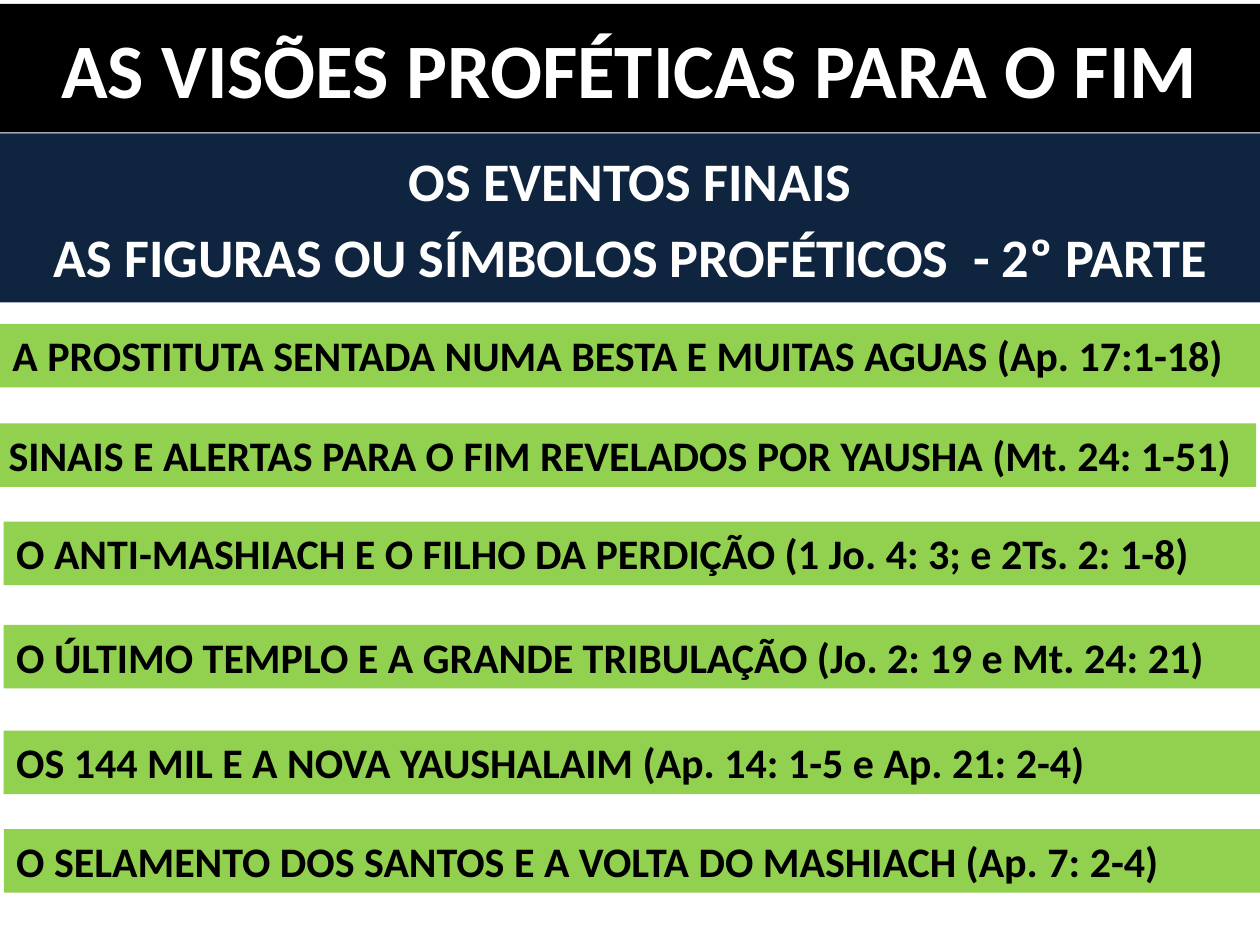
from dataclasses import dataclass

from pptx import Presentation
from pptx.dml.color import RGBColor
from pptx.enum.text import MSO_ANCHOR, MSO_AUTO_SIZE, PP_ALIGN
from pptx.util import Inches, Pt


@dataclass(frozen=True)
class Theme:
    font: str = "Calibri"
    title_size: float = 44
    subtitle_size: float = 31
    topic_size: float = 24
    light: str = "FFFFFF"
    dark: str = "000000"
    navy: str = "0F243E"
    green: str = "92D050"


@dataclass(frozen=True)
class Box:
    """A rectangle in shares of the slide's width and height."""
    left: float
    top: float
    width: float
    height: float


@dataclass(frozen=True)
class Topic:
    text: str
    top: float
    left: float = 0.003
    width: float = 1
    align: PP_ALIGN = PP_ALIGN.JUSTIFY


THEME = Theme()
SLIDE_W, SLIDE_H = Inches(10), Inches(7.5)
TOPIC_HEIGHT = 0.0673

TITLE = "AS VISÕES PROFÉTICAS PARA O FIM"
SUBTITLE = ["OS EVENTOS FINAIS", "AS FIGURAS OU SÍMBOLOS PROFÉTICOS  - 2º PARTE"]
TOPICS = [
    Topic("A PROSTITUTA SENTADA NUMA BESTA E MUITAS AGUAS (Ap. 17:1-18)",
          0.3427, left=0),
    Topic("SINAIS E ALERTAS PARA O FIM REVELADOS POR YAUSHA (Mt. 24: 1-51)",
          0.448, left=-0.003, align=PP_ALIGN.LEFT),
    Topic("O ANTI-MASHIACH E O FILHO DA PERDIÇÃO (1 Jo. 4: 3; e 2Ts. 2: 1-8)", 0.552),
    Topic("O ÚLTIMO TEMPLO E A GRANDE TRIBULAÇÃO (Jo. 2: 19 e Mt. 24: 21)", 0.6613),
    Topic("OS 144 MIL E A NOVA YAUSHALAIM (Ap. 14: 1-5 e Ap. 21: 2-4)",
          0.7733, width=1.006),
    Topic("O SELAMENTO DOS SANTOS E A VOLTA DO MASHIACH (Ap. 7: 2-4)",
          0.8773, width=1.001),
]


def place(sp, box: Box, fill: str) -> None:
    sp.left, sp.width = (round(SLIDE_W * v) for v in (box.left, box.width))
    sp.top, sp.height = (round(SLIDE_H * v) for v in (box.top, box.height))
    sp.fill.solid()
    sp.fill.fore_color.rgb = RGBColor.from_string(fill)


def write(sp, lines: list[str], *, size: float, color: str,
          align: PP_ALIGN = PP_ALIGN.CENTER,
          anchor: MSO_ANCHOR = MSO_ANCHOR.MIDDLE,
          auto_size: MSO_AUTO_SIZE = MSO_AUTO_SIZE.NONE,
          before: float = 0) -> None:
    tf = sp.text_frame
    tf.word_wrap = True
    tf.auto_size = auto_size
    tf.vertical_anchor = anchor
    for i, line in enumerate(lines):
        p = tf.add_paragraph() if i else tf.paragraphs[0]
        p.alignment = align
        p.space_before = Pt(before)
        r = p.add_run()
        r.text = line
        r.font.name = THEME.font
        r.font.size = Pt(size)
        r.font.bold = True
        r.font.color.rgb = RGBColor.from_string(color)


def add_band(s, box: Box, fill: str):
    sp = s.shapes.add_textbox(0, 0, 0, 0)
    place(sp, box, fill)
    return sp


def add_topic(s, topic: Topic) -> None:
    box = Box(topic.left, topic.top, topic.width, TOPIC_HEIGHT)
    write(add_band(s, box, THEME.green), [topic.text],
          size=THEME.topic_size, color=THEME.dark, align=topic.align,
          anchor=MSO_ANCHOR.TOP, auto_size=MSO_AUTO_SIZE.SHAPE_TO_FIT_TEXT)


def main() -> None:
    prs = Presentation()
    prs.slide_width, prs.slide_height = SLIDE_W, SLIDE_H
    s = prs.slides.add_slide(prs.slide_layouts[5])

    place(s.shapes.title, Box(0, 0.004, 1, 0.136), THEME.dark)
    write(s.shapes.title, [TITLE], size=THEME.title_size, color=THEME.light)

    subtitle = add_band(s, Box(0, 0.1413, 1, 0.1787), THEME.navy)
    write(subtitle, SUBTITLE, size=THEME.subtitle_size, color=THEME.light,
          before=THEME.subtitle_size * 0.2)

    for topic in TOPICS:
        add_topic(s, topic)
    prs.save("out.pptx")


if __name__ == "__main__":
    main()
